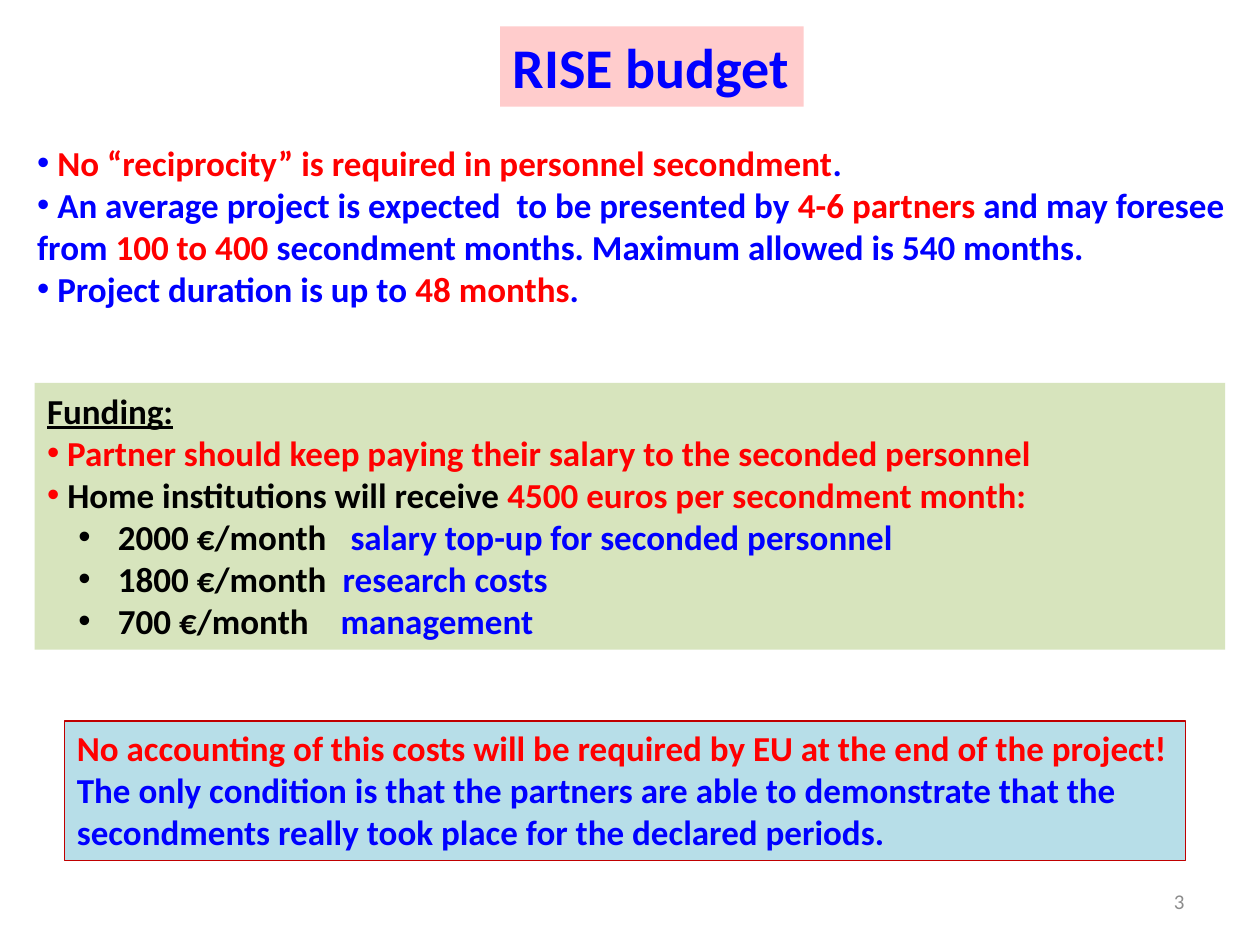
from pptx import Presentation
from pptx import util as u
from pptx.dml.color import RGBColor
from pptx.enum import shapes, text
from pptx.oxml.ns import qn
from lxml import etree

BLUE = RGBColor(0x00, 0x00, 0xFF)
RED = RGBColor(0xFF, 0x00, 0x00)
BLACK = RGBColor(0x00, 0x00, 0x00)
GREY = RGBColor(0x8C, 0x8C, 0x8C)
PINK = RGBColor(0xFF, 0xCC, 0xCC)
GREEN = RGBColor(0xD7, 0xE4, 0xBD)
SKY = RGBColor(0xB7, 0xDE, 0xE8)
WINE = RGBColor(0xC0, 0x00, 0x00)
FONT = "Calibri"


def add_run(para, words, color, size=20, bold=True, line=None):
    run = para.add_run()
    run.text = words
    font = run.font
    font.name, font.size, font.bold = FONT, u.Pt(size), bold
    font.color.rgb = color
    font.underline = line


def set_bullet(para, left=0, hang=0):
    props = para._p.get_or_add_pPr()
    props.set("marL", str(u.Cm(left)))
    props.set("indent", str(-u.Cm(hang)))
    etree.SubElement(props, qn("a:buFont")).set("typeface", "Arial")
    etree.SubElement(props, qn("a:buChar")).set("char", "•")


def set_frame(shape, wrap=True, anchor=text.MSO_ANCHOR.TOP):
    frame = shape.text_frame
    frame.word_wrap = wrap
    frame.auto_size = text.MSO_AUTO_SIZE.NONE
    frame.vertical_anchor = anchor
    return frame


def next_para(frame, index):
    para = frame.add_paragraph() if index else frame.paragraphs[0]
    para.alignment = text.PP_ALIGN.LEFT
    return para


def add_panel(slide, box, fill, edge=None):
    panel = slide.shapes.add_shape(shapes.MSO_SHAPE.RECTANGLE, *map(u.Cm, box))
    panel.shadow.inherit = False
    panel.fill.solid()
    panel.fill.fore_color.rgb = fill
    if edge is None:
        panel.line.fill.background()
    else:
        panel.line.color.rgb = edge
        panel.line.width = u.Pt(1)
    return set_frame(panel)


def put_title(slide, box):
    title = slide.shapes.title
    title.left, title.top, title.width, title.height = map(u.Cm, box)
    title.fill.solid()
    title.fill.fore_color.rgb = PINK
    para = next_para(set_frame(title, wrap=False), 0)
    add_run(para, "RISE budget", BLUE, size=32)


def put_rules(slide, box):
    frame = set_frame(slide.shapes.add_textbox(*map(u.Cm, box)))
    rules = [
        [(" ", BLUE), ("No “reciprocity” is required in personnel secondment", RED),
         (".", BLUE)],
        [(" An average project is expected  to be presented by ", BLUE),
         ("4-6 partners ", RED), ("and may foresee from ", BLUE),
         ("100 to 400 ", RED),
         ("secondment months. Maximum allowed is 540 months.", BLUE)],
        [(" Project duration is up to ", BLUE), ("48 months", RED), (".", BLUE)],
    ]
    for i, runs in enumerate(rules):
        para = next_para(frame, i)
        set_bullet(para)
        for words, color in runs:
            add_run(para, words, color)


def put_funds(slide, box):
    frame = add_panel(slide, box, GREEN)
    add_run(next_para(frame, 0), "Funding:", BLACK, line=True)
    # Main points
    points = [
        [(" Partner should keep paying their salary to the seconded personnel", RED)],
        [(" ", RED), ("Home institutions will receive ", BLACK),
         ("4500 euros per secondment month:", RED)],
    ]
    for i, runs in enumerate(points, 1):
        para = next_para(frame, i)
        set_bullet(para)
        for words, color in runs:
            add_run(para, words, color)
    # Monthly shares
    shares = [
        (" 2000 €/month   ", "salary top-up for seconded personnel"),
        (" 1800 €/month  ", "research costs"),
        (" 700 €/month    ", "management"),
    ]
    for i, (sum_, use) in enumerate(shares, 3):
        para = next_para(frame, i)
        para.level = 1
        set_bullet(para, left=1.27, hang=0.64)
        add_run(para, sum_, BLACK)
        add_run(para, use, BLUE)


def put_note(slide, box):
    frame = add_panel(slide, box, SKY, WINE)
    lines = [
        ("No accounting of this costs will be required by EU at the end of "
         "the project!", RED),
        ("The only condition is that the partners are able to demonstrate that "
         "the secondments really took place for the declared periods.", BLUE),
    ]
    for i, (words, color) in enumerate(lines):
        add_run(next_para(frame, i), words, color)


def put_number(slide, box):
    frame = set_frame(slide.shapes.add_textbox(*map(u.Cm, box)),
                      anchor=text.MSO_ANCHOR.MIDDLE)
    para = frame.paragraphs[0]
    para.alignment = text.PP_ALIGN.RIGHT
    add_run(para, "3", GREY, size=12, bold=False)


def main():
    deck = Presentation()
    deck.slide_width, deck.slide_height = u.Cm(25.4), u.Cm(19.05)
    slide = deck.slides.add_slide(deck.slide_layouts[5])
    # Boxes are left, top, width, height in cm
    put_title(slide, (10.08, 0.53, 6.12, 1.62))
    put_rules(slide, (0.5, 2.72, 24.9, 3.68))
    put_funds(slide, (0.7, 7.72, 24, 5.38))
    put_number(slide, (18.2, 17.65, 5.93, 1.02))
    put_note(slide, (1.3, 14.53, 22.6, 2.82))
    deck.save("out.pptx")


if __name__ == "__main__":
    main()
